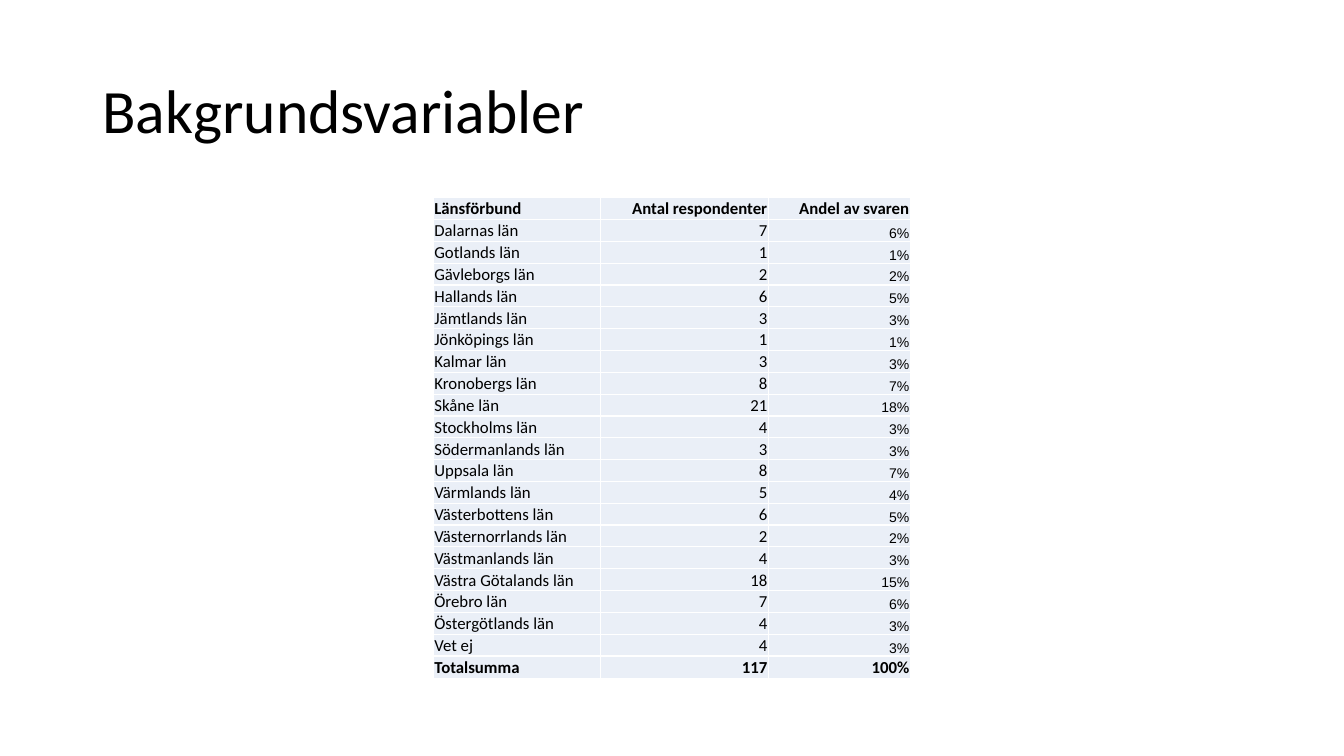
from dataclasses import dataclass

from lxml import etree
from pptx import Presentation
from pptx.dml.color import RGBColor
from pptx.enum.text import MSO_ANCHOR, MSO_AUTO_SIZE, PP_ALIGN
from pptx.oxml.ns import qn
from pptx.util import Pt

LEFT, RIGHT = PP_ALIGN.LEFT, PP_ALIGN.RIGHT
MIDDLE, BOTTOM = MSO_ANCHOR.MIDDLE, MSO_ANCHOR.BOTTOM
NO_AUTOFIT = MSO_AUTO_SIZE.NONE
TITLE_ONLY = 5


@dataclass(frozen=True)
class Theme:
    """Colours, fonts and type sizes of the slide."""
    ink: str = "000000"
    cell: str = "EAEFF7"
    border: str = "FFFFFF"
    main_font: str = "Calibri"
    share_font: str = "Arial"
    title_size: int = 44
    table_size: int = 12
    share_size: int = 10


THEME = Theme()
HEADINGS = ("Länsförbund", "Antal respondenter", "Andel av svaren")
RESPONDENTS = {
    "Dalarnas län": 7,
    "Gotlands län": 1,
    "Gävleborgs län": 2,
    "Hallands län": 6,
    "Jämtlands län": 3,
    "Jönköpings län": 1,
    "Kalmar län": 3,
    "Kronobergs län": 8,
    "Skåne län": 21,
    "Stockholms län": 4,
    "Södermanlands län": 3,
    "Uppsala län": 8,
    "Värmlands län": 5,
    "Västerbottens län": 6,
    "Västernorrlands län": 2,
    "Västmanlands län": 4,
    "Västra Götalands län": 18,
    "Örebro län": 7,
    "Östergötlands län": 4,
    "Vet ej": 4,
}
COLUMN_WIDTHS = (119.6, 119.6, 101.4)
ROW_HEIGHT = 15.6
TOTAL_HEIGHT = 16


def add_run(paragraph, text, size, font, bold=False):
    """Append one formatted run to a paragraph."""
    run = paragraph.add_run()
    run.text = text
    run.font.size = Pt(size)
    run.font.name = font
    run.font.bold = bold
    run.font.color.rgb = RGBColor.from_string(THEME.ink)


def set_title(slide, text):
    """Place and fill the title placeholder."""
    title = slide.shapes.title
    title.left, title.top = Pt(66), Pt(28.8)
    title.width, title.height = Pt(828), Pt(104.4)
    frame = title.text_frame
    frame.auto_size = NO_AUTOFIT
    frame.vertical_anchor = MIDDLE
    heading = frame.paragraphs[0]
    heading.alignment = LEFT
    heading.line_spacing = 0.9
    add_run(heading, text, THEME.title_size, THEME.main_font)


def add_borders(cell):
    """Draw a one-point line on every side of a cell."""
    properties = cell._tc.get_or_add_tcPr()
    for side in ("a:lnL", "a:lnR", "a:lnT", "a:lnB"):
        line = etree.SubElement(properties, qn(side), w=str(Pt(1)))
        fill = etree.SubElement(line, qn("a:solidFill"))
        etree.SubElement(fill, qn("a:srgbClr"), val=THEME.border)


def fill_cell(cell, text, align, size, font, bold):
    """Format one table cell and write its text."""
    cell.margin_left = cell.margin_right = cell.margin_top = Pt(0.7)
    cell.margin_bottom = Pt(0)
    cell.vertical_anchor = BOTTOM
    add_borders(cell)
    cell.fill.solid()
    cell.fill.fore_color.rgb = RGBColor.from_string(THEME.cell)
    paragraph = cell.text_frame.paragraphs[0]
    paragraph.alignment = align
    add_run(paragraph, text, size, font, bold)


def county_rows():
    """Return the table's rows, with shares worked out from the counts."""
    total = sum(RESPONDENTS.values())
    counts = {**RESPONDENTS, "Totalsumma": total}
    return [HEADINGS] + [
        (county, str(count), f"{count / total:.0%}")
        for county, count in counts.items()
    ]


def add_county_table(slide, rows):
    """Add the table with bold first and last rows."""
    last = len(rows) - 1
    table = slide.shapes.add_table(
        len(rows), len(HEADINGS), Pt(309.6), Pt(141.2),
        Pt(sum(COLUMN_WIDTHS)), Pt(ROW_HEIGHT * last + TOTAL_HEIGHT),
    ).table
    table.first_row = table.horz_banding = False
    for column, width in zip(table.columns, COLUMN_WIDTHS):
        column.width = Pt(width)
    for r, texts in enumerate(rows):
        table.rows[r].height = Pt(TOTAL_HEIGHT if r == last else ROW_HEIGHT)
        bold = r in (0, last)
        for c, text in enumerate(texts):
            is_share = c == 2 and not bold
            fill_cell(
                table.cell(r, c), text,
                RIGHT if c else LEFT,
                THEME.share_size if is_share else THEME.table_size,
                THEME.share_font if is_share else THEME.main_font,
                bold,
            )


def main():
    """Build and save the slide."""
    presentation = Presentation()
    presentation.slide_width, presentation.slide_height = Pt(960), Pt(540)
    slide = presentation.slides.add_slide(presentation.slide_layouts[TITLE_ONLY])
    set_title(slide, "Bakgrundsvariabler")
    add_county_table(slide, county_rows())
    presentation.save("out.pptx")


if __name__ == "__main__":
    main()
